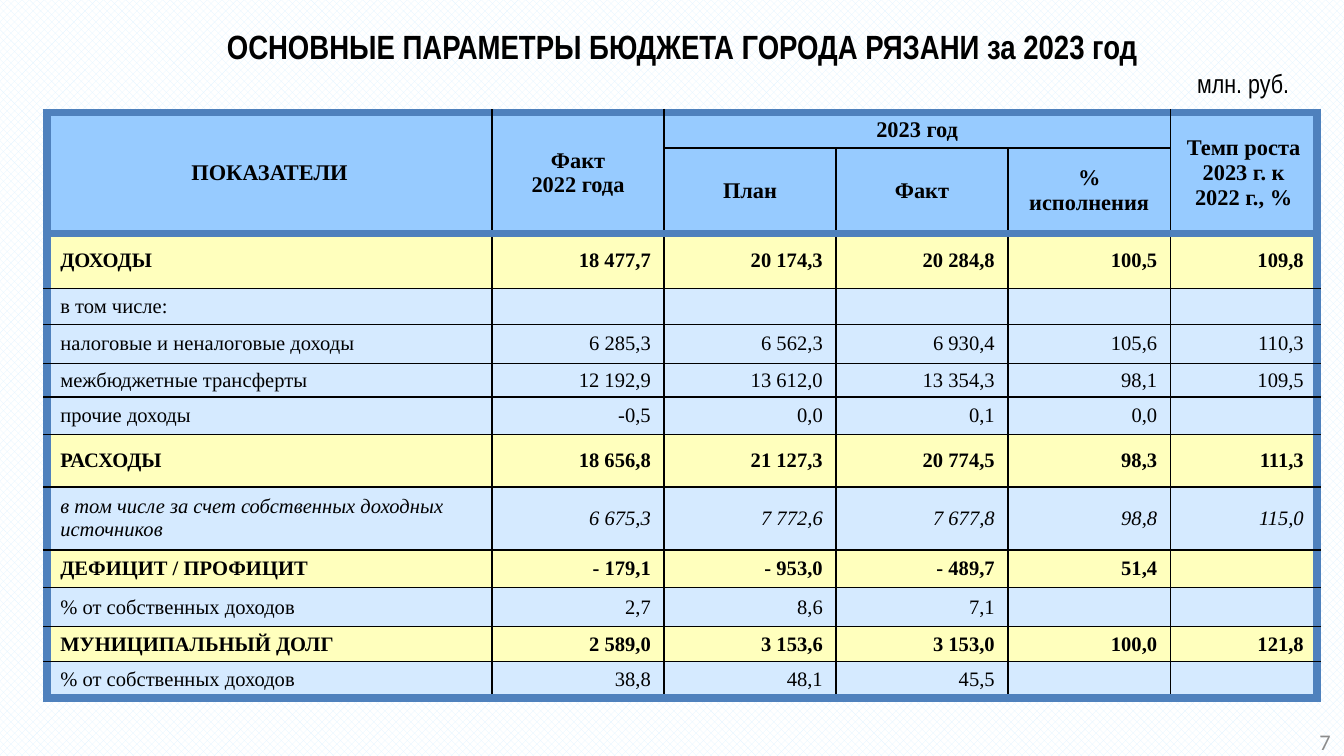
"""Build the slide with the main budget parameters of Ryazan for 2023."""
from dataclasses import dataclass

from lxml.etree import SubElement, fromstring, tostring
from pptx import Presentation
from pptx.dml.color import RGBColor
from pptx.enum.dml import MSO_PATTERN as Pattern
from pptx.enum.text import MSO_ANCHOR as Anchor, PP_ALIGN as Align
from pptx.oxml import parse_xml
from pptx.oxml.ns import qn
from pptx.slide import Slide
from pptx.table import Table, _Cell as Cell
from pptx.text.text import TextFrame
from pptx.util import Cm, Pt

BLACK, BLUE = "000000", "4F81BD"
HEADER_FILL, TOTAL_FILL, DETAIL_FILL = "97CBFF", "FFFFBD", "D5EAFF"
HEADER_ROWS = 2
COLUMN_WIDTHS = (8.41, 3.25, 3.25, 3.25, 3.07, 2.77)


@dataclass(frozen=True)
class Style:
    size: float
    font: str = "Times New Roman"
    color: str = BLACK
    bold: bool = False
    italic: bool = False


@dataclass(frozen=True)
class BudgetRow:
    height: float
    label: str
    values: tuple[str, ...]
    total: bool = False
    italic: bool = False


@dataclass(frozen=True)
class Heading:
    row: int
    column: int
    text: str
    rows: int = 1
    columns: int = 1


HEADER_HEIGHTS = (0.66, 1.58)
HEADINGS = (
    Heading(0, 0, "ПОКАЗАТЕЛИ", rows=2),
    Heading(0, 1, "Факт\n2022 года", rows=2),
    Heading(0, 2, "2023 год", columns=3),
    Heading(0, 5, "Темп роста 2023 г. к 2022 г., %", rows=2),
    Heading(1, 2, "План"),
    Heading(1, 3, "Факт"),
    Heading(1, 4, "% исполнения"),
)
BUDGET = (
    BudgetRow(1.04, "ДОХОДЫ", ("18 477,7", "20 174,3", "20 284,8", "100,5", "109,8"), total=True),
    BudgetRow(0.66, "в том числе:", ("", "", "", "", "")),
    BudgetRow(0.74, "налоговые и неналоговые доходы", ("6 285,3", "6 562,3", "6 930,4", "105,6", "110,3")),
    BudgetRow(0.63, "межбюджетные трансферты", ("12 192,9", "13 612,0", "13 354,3", "98,1", "109,5")),
    BudgetRow(0.71, "прочие доходы", ("-0,5", "0,0", "0,1", "0,0", "")),
    BudgetRow(0.99, "РАСХОДЫ", ("18 656,8", "21 127,3", "20 774,5", "98,3", "111,3"), total=True),
    BudgetRow(1.19, "в том числе за счет собственных доходных источников",
              ("6 675,3", "7 772,6", "7 677,8", "98,8", "115,0"), italic=True),
    BudgetRow(0.71, "ДЕФИЦИТ / ПРОФИЦИТ", ("- 179,1", "- 953,0", "- 489,7", "51,4", ""), total=True),
    BudgetRow(0.74, "% от собственных доходов", ("2,7", "8,6", "7,1", "", "")),
    BudgetRow(0.66, "МУНИЦИПАЛЬНЫЙ ДОЛГ", ("2 589,0", "3 153,6", "3 153,0", "100,0", "121,8"), total=True),
    BudgetRow(0.69, "% от собственных доходов", ("38,8", "48,1", "45,5", "", "")),
)


def rgb(color: str) -> RGBColor:
    """Turn a hex string into a colour."""
    return RGBColor.from_string(color)


def write(frame: TextFrame, text: str, style: Style, align: Align) -> None:
    """Set the text of a frame and format its paragraphs."""
    frame.text = text
    frame.word_wrap = True
    for para in frame.paragraphs:
        para.alignment = align
        for span in para.runs:
            font = span.font
            font.name, font.size = style.font, Pt(style.size)
            font.bold, font.italic = style.bold, style.italic
            font.color.rgb = rgb(style.color)
        if not para.runs:
            end = SubElement(para._p, qn("a:endParaRPr"))
            end.set("sz", str(int(style.size * 100)))


def fill_cell(cell: Cell, text: str, fill: str, style: Style, align: Align) -> None:
    """Write a table cell and colour it."""
    cell.fill.solid()
    cell.fill.fore_color.rgb = rgb(fill)
    cell.vertical_anchor = Anchor.MIDDLE
    cell.margin_left = cell.margin_right = Cm(0.25)
    cell.margin_top = cell.margin_bottom = Cm(0.1)
    write(cell.text_frame, text, style, align)


def draw_borders(table: Table) -> None:
    """Rule the grid in black, with thick blue lines round the header and the body."""
    last_row, last_column = len(table.rows), len(table.columns)
    blue_rows = (0, HEADER_ROWS, last_row)
    namespace = "http://schemas.openxmlformats.org/drawingml/2006/main"
    for row in range(last_row):
        for column in range(last_column):
            cell = table.cell(row, column)
            if cell.is_spanned:
                continue
            bottom = row + (cell.span_height if cell.is_merge_origin else 1)
            right = column + (cell.span_width if cell.is_merge_origin else 1)
            sides = (("L", column == 0), ("R", right == last_column),
                     ("T", row in blue_rows), ("B", bottom in blue_rows))
            properties = cell._tc.get_or_add_tcPr()
            for position, (side, thick) in enumerate(sides):
                color, width = (BLUE, Pt(4.5)) if thick else (BLACK, Pt(1))
                properties.insert(position, parse_xml(
                    f'<a:ln{side} xmlns:a="{namespace}" w="{width}"><a:solidFill>'
                    f'<a:srgbClr val="{color}"/></a:solidFill></a:ln{side}>'))


def add_budget_table(page: Slide) -> None:
    """Add the table of budget figures."""
    heights = HEADER_HEIGHTS + tuple(line.height for line in BUDGET)
    table = page.shapes.add_table(
        len(heights), len(COLUMN_WIDTHS), Cm(0.89), Cm(2.13),
        Cm(sum(COLUMN_WIDTHS)), Cm(sum(heights))).table
    table.first_row = table.horz_banding = False
    for column, width in zip(table.columns, COLUMN_WIDTHS):
        column.width = Cm(width)
    for row, height in zip(table.rows, heights):
        row.height = Cm(height)
    for heading in HEADINGS:
        cell = table.cell(heading.row, heading.column)
        if heading.rows * heading.columns > 1:
            cell.merge(table.cell(heading.row + heading.rows - 1,
                                  heading.column + heading.columns - 1))
        fill_cell(cell, heading.text, HEADER_FILL, Style(12, bold=True), Align.CENTER)
        if heading.columns > 1:
            cell.vertical_anchor = Anchor.TOP
    for row, line in enumerate(BUDGET, HEADER_ROWS):
        fill = TOTAL_FILL if line.total else DETAIL_FILL
        style = Style(11, bold=line.total, italic=line.italic)
        for column, text in enumerate((line.label, *line.values)):
            align = Align.RIGHT if column else Align.LEFT
            fill_cell(table.cell(row, column), text, fill, style, align)
    draw_borders(table)


def add_label(page: Slide, left: float, top: float, width: float, height: float,
              text: str, style: Style, align: Align, anchor: Anchor) -> None:
    """Add a text box with one line of text."""
    box = page.shapes.add_textbox(Cm(left), Cm(top), Cm(width), Cm(height))
    write(box.text_frame, text, style, align)
    box.text_frame.vertical_anchor = anchor


def main() -> None:
    """Build and save the deck."""
    deck = Presentation()
    deck.slide_width, deck.slide_height = Cm(25.4), Cm(14.29)
    page = deck.slides.add_slide(deck.slide_layouts[5])
    background = page.background.fill
    background.patterned()
    background.pattern = Pattern.LARGE_CHECKER_BOARD
    background.fore_color.rgb = rgb("E1F4FF")
    background.back_color.rgb = rgb("FFFFFF")

    title = page.shapes.title
    title.left, title.top, title.width, title.height = Cm(1.3), Cm(0.36), Cm(23.19), Cm(0.89)
    write(title.text_frame, "ОСНОВНЫЕ ПАРАМЕТРЫ БЮДЖЕТА ГОРОДА РЯЗАНИ за 2023 год",
          Style(18, "Arial Narrow", bold=True), Align.CENTER)
    title.text_frame.vertical_anchor = Anchor.TOP

    add_budget_table(page)
    add_label(page, 22.1, 1.14, 2.79, 0.86, "млн. руб.",
              Style(14, "Arial Narrow"), Align.CENTER, Anchor.TOP)
    add_label(page, 24.21, 13.74, 1.19, 0.56, "7",
              Style(12, "Calibri", "8C8C8C"), Align.RIGHT, Anchor.MIDDLE)
    deck.save("out.pptx")


if __name__ == "__main__":
    main()
